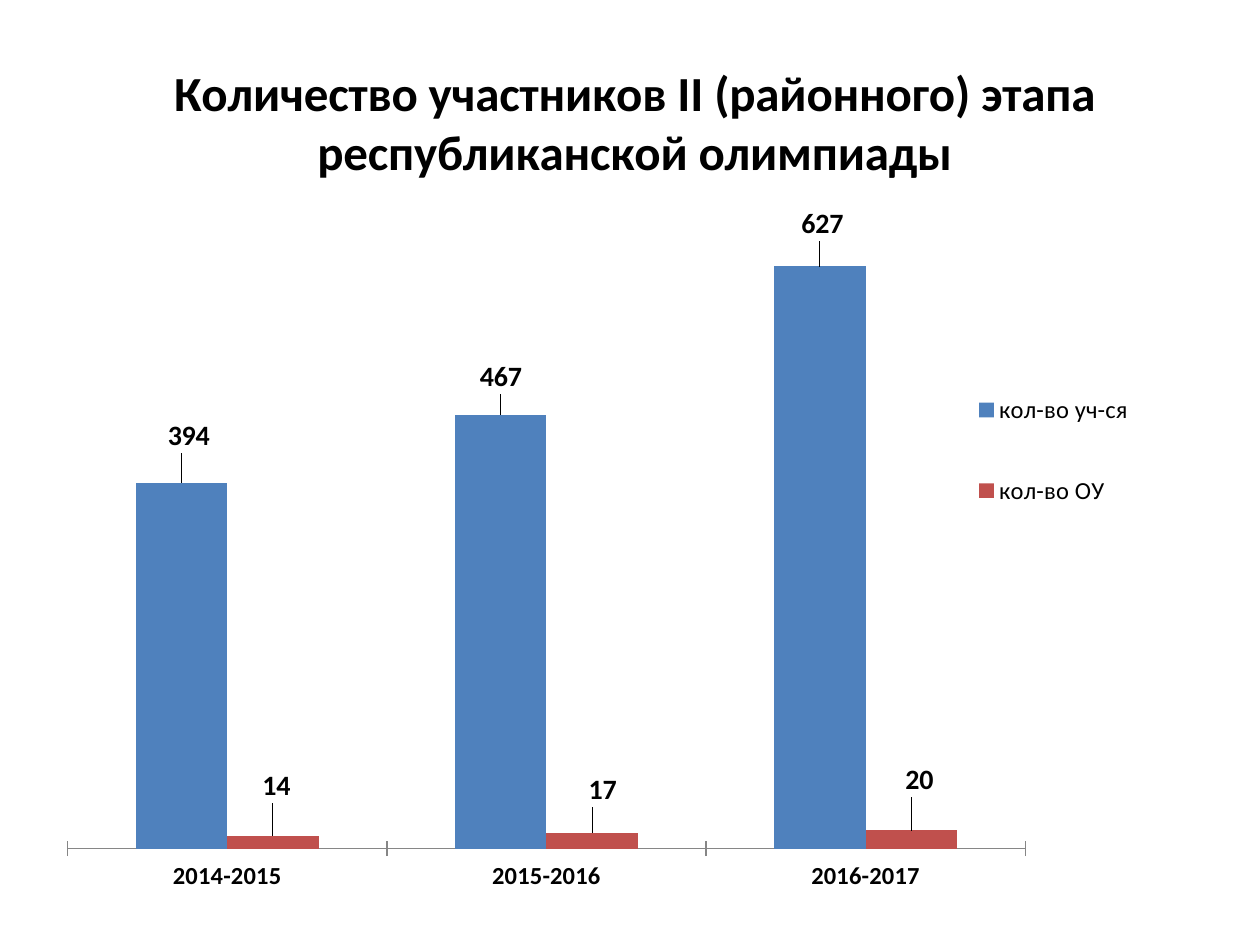
from lxml import etree
from pptx import Presentation
from pptx.chart.data import CategoryChartData
from pptx.dml.color import RGBColor
from pptx.enum import chart as ch
from pptx.oxml import ns
from pptx.util import Cm, Pt

COLORS = {"text": "000000", "pupils": "4F81BD", "schools": "C0504D", "axis": "868686"}
YEARS = ["2014-2015", "2015-2016", "2016-2017"]
SERIES = [
    ("кол-во уч-ся", [394, 467, 627], "pupils",
     [(0.006, -0.028), (0, -0.018), (0.002, -0.023)]),
    ("кол-во ОУ", [14, 17, 20], "schools",
     [(0.003, -0.031), (0.009, -0.023), (0.007, -0.031)]),
]


def manual_layout(**values):
    layout = etree.Element(ns.qn("c:layout"))
    manual = etree.SubElement(layout, ns.qn("c:manualLayout"))
    for tag, value in values.items():
        etree.SubElement(manual, ns.qn(f"c:{tag}")).set("val", str(value))
    return layout


class Deck:
    font_name = "Calibri"

    def __init__(self):
        self.prs = Presentation()
        self.prs.slide_width, self.prs.slide_height = Cm(25.4), Cm(19.05)
        self.s = self.prs.slides.add_slide(self.prs.slide_layouts[6])

    def style(self, font, size, bold=False):
        font.name, font.size, font.bold = self.font_name, Pt(size), bold
        font.color.rgb = RGBColor.from_string(COLORS["text"])

    def column_chart(self, left, top, width, height):
        data = CategoryChartData()
        data.categories = YEARS
        for name, values, *_ in SERIES:
            data.add_series(name, values)
        frame = self.s.shapes.add_chart(
            ch.XL_CHART_TYPE.COLUMN_CLUSTERED,
            Cm(left), Cm(top), Cm(width), Cm(height), data)
        chart = frame.chart
        self.style(chart.font, 10)
        plot = chart.plots[0]
        plot.gap_width, plot.overlap, plot.vary_by_categories = 150, 0, False
        area = chart._chartSpace.chart.plotArea
        for old in area.findall(ns.qn("c:layout")):
            area.remove(old)
        area.insert(0, manual_layout(
            layoutTarget="inner", xMode="edge", yMode="edge",
            x=0.02, y=0.195, w=0.811, h=0.736))
        return chart

    def title(self, chart, words):
        chart.has_title = True
        p = chart.chart_title.text_frame.paragraphs[0]
        p.text = words
        self.style(p.font, 28, True)
        chart.chart_title.include_in_layout = False

    def axes(self, chart):
        cat, val = chart.category_axis, chart.value_axis
        self.style(cat.tick_labels.font, 14, True)
        cat.major_tick_mark = ch.XL_TICK_MARK.CROSS
        cat.format.line.color.rgb = RGBColor.from_string(COLORS["axis"])
        cat.format.line.width = Pt(0.75)
        val.visible = val.has_major_gridlines = False
        val.minimum_scale, val.maximum_scale = 0, 700

    def columns(self, series, color, offsets):
        series.format.fill.solid()
        series.format.fill.fore_color.rgb = RGBColor.from_string(COLORS[color])
        labels = series.data_labels
        labels.show_value = True
        labels.position = ch.XL_LABEL_POSITION.OUTSIDE_END
        self.style(labels.font, 16, True)
        for i, (x, y) in enumerate(offsets):
            label = series.points[i].data_label
            self.style(label.font, 16, True)
            label.position = ch.XL_LABEL_POSITION.OUTSIDE_END
        for idx, (x, y) in zip(series._element.xpath("c:dLbls/c:dLbl/c:idx"), offsets):
            idx.addnext(manual_layout(x=x, y=y))

    def legend(self, chart):
        chart.has_legend = True
        legend = chart.legend
        legend.position = ch.XL_LEGEND_POSITION.RIGHT
        legend.include_in_layout = False
        self.style(legend.font, 14)
        element = legend._element
        for old in element.findall(ns.qn("c:layout")):
            element.remove(old)
        element.find(ns.qn("c:legendPos")).addnext(manual_layout(
            xMode="edge", yMode="edge", x=0.78, y=0.36, w=0.15, h=0.24))


def main():
    deck = Deck()
    chart = deck.column_chart(0.89, 0.53, 23.8, 17.81)
    deck.title(chart, "Количество участников II (районного) этапа республиканской олимпиады")
    deck.axes(chart)
    for series, (_, _, color, offsets) in zip(chart.plots[0].series, SERIES):
        deck.columns(series, color, offsets)
    deck.legend(chart)
    deck.prs.save("out.pptx")


if __name__ == "__main__":
    main()
